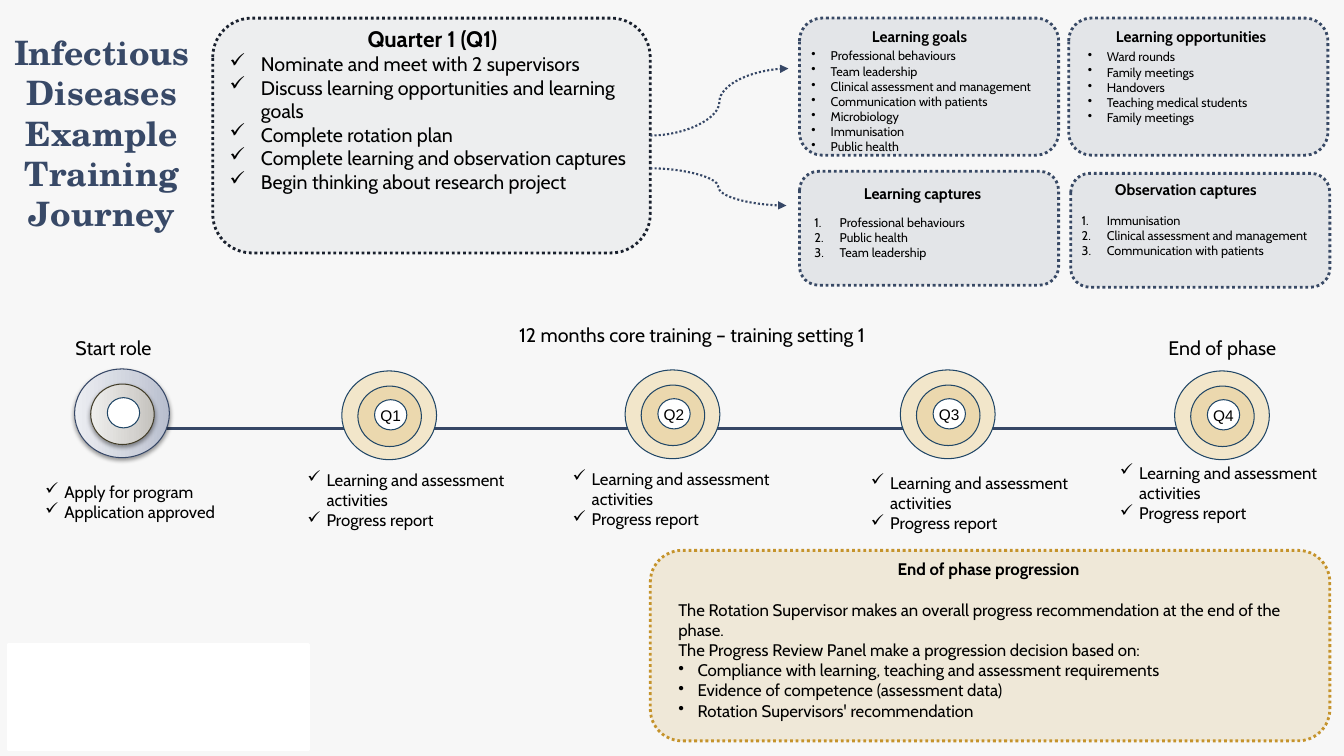
from lxml import etree
from pptx import Presentation
from pptx import util as u
from pptx.dml.color import RGBColor
from pptx.enum import dml, shapes, text
from pptx.oxml import parse_xml
from pptx.oxml.ns import nsdecls, qn

BLACK = RGBColor(0, 0, 0)
WHITE = RGBColor(0xFF, 0xFF, 0xFF)
PAPER = RGBColor(0xF7, 0xF7, 0xF7)
NAVY = RGBColor(0x36, 0x47, 0x66)
SLATE = RGBColor(0x38, 0x49, 0x65)
TITLE = RGBColor(0x38, 0x49, 0x67)
INK = RGBColor(0x19, 0x20, 0x2D)
OCHRE = RGBColor(0xC5, 0x93, 0x2B)
CREAM = RGBColor(0xF2, 0xE6, 0xCA)
GOLD = RGBColor(0xD3, 0xA4, 0x40)
BLUE = RGBColor(0x20, 0x46, 0x66)
BROWN = RGBColor(0x42, 0x3D, 0x29)
STEEL = ("B8BECE", "CDD1DC", "ECEEF2")
STONE = ("C3C1BC", "D5D3D0", "EFEFED")

SHAPE = shapes.MSO_SHAPE
CURVE = shapes.MSO_CONNECTOR.CURVE
CENTER = text.PP_ALIGN.CENTER
TASKS = ["Learning and assessment activities", "Progress report"]


def inches(*sizes):
    return [u.Inches(size) for size in sizes]


def add_shape(slide, kind, box, fill, line, width, alpha=100, dots=False):
    shape = slide.shapes.add_shape(kind, *inches(*box))
    shape.shadow.inherit = False
    shape.fill.solid()
    shape.fill.fore_color.rgb = fill
    if alpha < 100:
        color = shape.fill._xPr.find(".//" + qn("a:srgbClr"))
        etree.SubElement(color, qn("a:alpha")).set("val", str(alpha * 1000))
    shape.line.color.rgb = line
    shape.line.width = u.Pt(width)
    if dots:
        shape.line.dash_style = dml.MSO_LINE.ROUND_DOT
    return shape


def add_panel(slide, box, color, line, alpha):
    return add_shape(slide, SHAPE.ROUNDED_RECTANGLE, box, color, line, 2, alpha, True)


def add_line(slide, kind, start, end, width):
    line = slide.shapes.add_connector(kind, *inches(*start, *end))
    line.line.color.rgb = NAVY
    line.line.width = u.Pt(width)
    etree.SubElement(line._element.spPr, qn("a:effectLst"))
    return line


def add_arrow(slide, start, end):
    arrow = add_line(slide, CURVE, start, end, 1.5)
    arrow.line.dash_style = dml.MSO_LINE.ROUND_DOT
    tail = etree.SubElement(arrow.line._get_or_add_ln(), qn("a:tailEnd"))
    tail.set("type", "triangle")
    return arrow


def shade(disc, colors):
    """Give a disc a three-step gradient and a soft shadow."""
    stops = "".join(
        f'<a:gs pos="{pos}"><a:srgbClr val="{color}"/></a:gs>'
        for pos, color in zip((0, 35000, 100000), colors))
    grad = parse_xml(
        f'<a:gradFill {nsdecls("a")} rotWithShape="1"><a:gsLst>{stops}</a:gsLst>'
        '<a:lin ang="16200000" scaled="1"/></a:gradFill>')
    props = disc._element.spPr
    props.replace(props.find(qn("a:solidFill")), grad)
    props.find(qn("a:effectLst")).append(parse_xml(
        f'<a:outerShdw {nsdecls("a")} blurRad="39370" dist="20320" dir="5400000" '
        'rotWithShape="0"><a:srgbClr val="000000"><a:alpha val="38000"/>'
        '</a:srgbClr></a:outerShdw>'))


def add_target(slide, left, top, start=False):
    """Draw three nested discs."""
    rings = [(0, 0, 0.88, 0.94, CREAM, 100, NAVY, STEEL),
             (0.145, 0.165, 0.6, 0.63, GOLD, 20, BROWN, STONE),
             (0.305, 0.305, 0.3, 0.32, WHITE, 100, BLUE, None)]
    for dx, dy, wide, high, fill, alpha, edge, colors in rings:
        disc = add_shape(slide, SHAPE.OVAL, (left + dx, top + dy, wide, high),
                         fill, edge if start else BLUE, 0.75, alpha)
        disc.rotation = 270
        if start and colors:
            shade(disc, colors)


def add_text(slide, box, lines, size, font="Cabin", color=BLACK, bold=False,
             align=None, wrap=True):
    area = slide.shapes.add_textbox(*inches(*box))
    frame = area.text_frame
    frame.text = "\n".join(lines)
    frame.word_wrap = wrap
    frame.auto_size = text.MSO_AUTO_SIZE.SHAPE_TO_FIT_TEXT
    for para in frame.paragraphs:
        para.alignment = align
        style(para, size, bold, font, color)
    return frame


def style(para, size, bold, font="Cabin", color=BLACK):
    for run in para.runs:
        run.font.size = u.Pt(size)
        run.font.bold = bold
        run.font.name = font
        run.font.color.rgb = color


def mark(paras, sign, indent=0.19):
    """Put a sign, or a running number for "1.", before each paragraph."""
    for para in paras:
        props = para._p.get_or_add_pPr()
        props.set("marL", str(u.Inches(indent)))
        props.set("indent", str(-u.Inches(indent)))
        if sign == "1.":
            etree.SubElement(props, qn("a:buAutoNum")).set("type", "arabicPeriod")
        else:
            etree.SubElement(props, qn("a:buChar")).set("char", sign)


def add_list(slide, box, lines, size, sign, indent=0.19):
    mark(add_text(slide, box, lines, size).paragraphs, sign, indent)


def add_label(slide, box, words, size, bold=False):
    add_text(slide, box, [words], size, bold=bold, wrap=False)


def draw_track(slide):
    add_line(slide, shapes.MSO_CONNECTOR.STRAIGHT, (0.9, 4.25), (12.34, 4.25), 2.25)
    add_target(slide, 0.77, 3.63, start=True)
    stops = [(3.42, 3.65, 2.95, 4.61, 2.19), (6.23, 3.64, 5.58, 4.6, 2.62),
             (8.96, 3.64, 8.54, 4.64, 2.19), (11.68, 3.65, 11.01, 4.54, 2.32)]
    for num, (left, top, x, y, wide) in enumerate(stops, 1):
        add_target(slide, left, top)
        add_text(slide, (left + 0.255, top + 0.33, 0.83, 0.29), [f"Q{num}"], 11, "Arial")
        add_list(slide, (x, y, wide, 0.71), TASKS, 12, "✓")
    add_list(slide, (0.35, 4.73, 2.16, 0.5),
             ["Apply for program", "Application approved"], 12, "✓")
    add_label(slide, (0.65, 3.28, 0.97, 0.34), "Start role", 14)
    add_label(slide, (11.49, 3.28, 1.35, 0.34), "End of phase", 14)
    add_label(slide, (5.05, 3.15, 3.76, 0.34),
              "12 months core training – training setting 1", 14)


def draw_quarter(slide):
    panel = add_panel(slide, (2.11, 0.18, 4.34, 2.33), SLATE, INK, 5)
    frame = add_text(slide, (2.18, 0.2, 4.22, 2.22), [
        "Quarter 1 (Q1)", "Nominate and meet with 2 supervisors",
        "Discuss learning opportunities and learning goals",
        "Complete rotation plan", "Complete learning and observation captures",
        "Begin thinking about research project"], 14)
    head, *tasks = frame.paragraphs
    head.alignment = CENTER
    style(head, 16, True)
    mark(tasks, "✓", 0.31)
    add_arrow(slide, (6.45, 1.35), (7.82, 0.68)).begin_connect(panel, 3)
    add_arrow(slide, (6.45, 1.67), (7.8, 2.04))


def draw_cards(slide):
    # Panel, heading box, list box, sign, indent, heading, items
    cards = [
        ((7.93, 0.18, 2.57, 1.36), (8.55, 0.22, 1.22, 0.29), (7.95, 0.43, 2.68, 1.16),
         "•", 0.19, "Learning goals",
         ["Professional behaviours", "Team leadership",
          "Clinical assessment and management", "Communication with patients",
          "Microbiology", "Immunisation", "Public health"]),
        ((10.6, 0.18, 2.57, 1.36), (10.97, 0.22, 1.83, 0.29), (10.69, 0.44, 2.28, 0.86),
         "•", 0.19, "Learning opportunities",
         ["Ward rounds", "Family meetings", "Handovers",
          "Teaching medical students", "Family meetings"]),
        ((7.93, 1.7, 2.57, 1.13), (8.47, 1.78, 1.49, 0.29), (7.98, 2.08, 2.57, 0.56),
         "1.", 0.25, "Learning captures",
         ["Professional behaviours", "Public health", "Team leadership"]),
        ((10.62, 1.72, 2.57, 1.13), (10.96, 1.74, 1.74, 0.29), (10.63, 2.06, 2.62, 0.56),
         "1.", 0.25, "Observation captures",
         ["Immunisation", "Clinical assessment and management",
          "Communication with patients"])]
    for panel, top, body, sign, indent, head, items in cards:
        add_panel(slide, panel, SLATE, SLATE, 10)
        add_label(slide, top, head, 11, bold=True)
        add_list(slide, body, items, 9, sign, indent)


def draw_finish(slide):
    add_panel(slide, (6.45, 5.46, 6.74, 1.89), OCHRE, OCHRE, 15)
    frame = add_text(slide, (6.63, 5.49, 6.35, 1.72), [
        "End of phase progression",
        "The Rotation Supervisor makes an overall progress recommendation "
        "at the end of the phase.",
        "The Progress Review Panel make a progression decision based on:",
        "Compliance with learning, teaching and assessment requirements",
        "Evidence of competence (assessment data)",
        "Rotation Supervisors' recommendation"], 12)
    head, lead, _, *basis = frame.paragraphs
    head.alignment = CENTER
    style(head, 12, True)
    lead.space_before = u.Pt(15)
    mark(basis, "•")


def draw_title(slide):
    frame = add_text(slide, (-0.02, 0.86, 2.06, 0.91),
                     ["Infectious Diseases", "Example", "Training Journey"], 24,
                     "TeX Gyre Schola", TITLE, True, CENTER)
    frame.auto_size = text.MSO_AUTO_SIZE.NONE
    frame.vertical_anchor = text.MSO_ANCHOR.MIDDLE
    frame.margin_left = frame.margin_right = u.Inches(0.07)
    frame.margin_top = frame.margin_bottom = u.Inches(0.04)


def main():
    deck = Presentation()
    deck.slide_width, deck.slide_height = inches(13.33, 7.5)
    slide = deck.slides.add_slide(deck.slide_layouts[6])
    slide.background.fill.solid()
    slide.background.fill.fore_color.rgb = PAPER
    draw_track(slide)
    draw_quarter(slide)
    draw_cards(slide)
    draw_finish(slide)
    draw_title(slide)
    # Blank block at lower left
    add_shape(slide, SHAPE.RECTANGLE, (0.08, 6.39, 2.98, 1.05), WHITE, WHITE, 2)
    deck.save("out.pptx")


if __name__ == "__main__":
    main()
